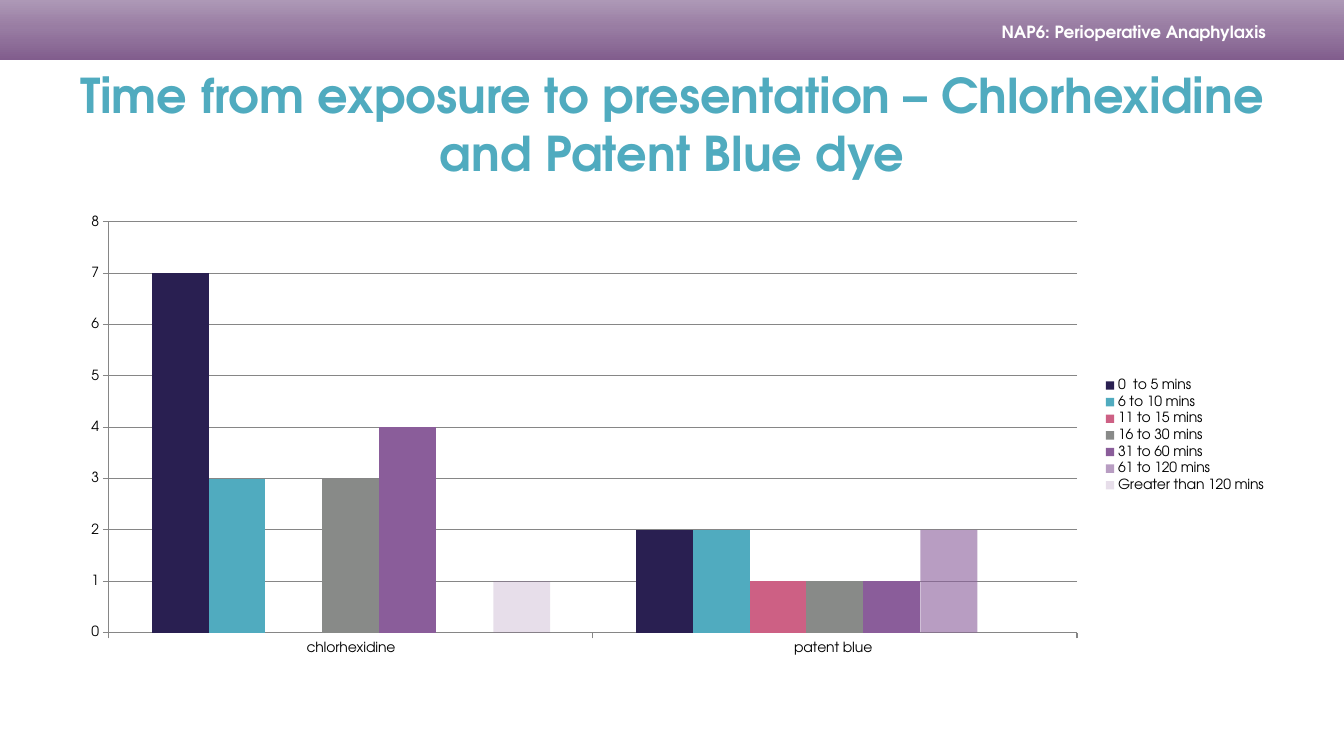
from copy import deepcopy
from lxml import etree
from pptx import Presentation
from pptx import util as u
from pptx.chart import data
from pptx.dml import color
from pptx.enum import chart as ch, shapes, text
from pptx.oxml import ns

Pt = u.Pt
FONT = "TeX Gyre Adventor"
COLORS = {
    "navy": "291F51", "teal": "50ABBF", "pink": "CD6084", "grey": "888A88",
    "purple": "8A5D9A", "line": "868686", "black": "000000", "white": "FFFFFF",
    "band_dark": "815D8D", "band_mid": "997DA3", "band_light": "AD98B6",
}


def rgb(name):
    return color.RGBColor.from_string(COLORS[name])


def add_text(box, words, size, tint, align):
    left, top, width, height = box
    tf = s.shapes.add_textbox(Pt(left), Pt(top), Pt(width), Pt(height)).text_frame
    tf.word_wrap = True
    tf.vertical_anchor = text.MSO_ANCHOR.MIDDLE
    p = tf.paragraphs[0]
    p.alignment = align
    r = p.add_run()
    r.text = words
    r.font.name, r.font.size, r.font.bold = FONT, Pt(size), True
    r.font.color.rgb = rgb(tint)


prs = Presentation()
prs.slide_width, prs.slide_height = Pt(960), Pt(540)
s = prs.slides.add_slide(prs.slide_layouts[6])

# Header band, darkest at the bottom
band = s.shapes.add_shape(shapes.MSO_SHAPE.RECTANGLE, 0, 0, Pt(960), Pt(43))
band.shadow.inherit = False
band.line.fill.background()
band.fill.gradient()
band.fill.gradient_angle = 90
first_stop = band.fill.gradient_stops
gs_list = band.fill._xPr.find(ns.qn("a:gradFill")).find(ns.qn("a:gsLst"))
gs_list.insert(1, deepcopy(gs_list[0]))
band_stops = [("band_dark", 0), ("band_mid", 0.55), ("band_light", 1)]
for stop, (name, position) in zip(band.fill.gradient_stops, band_stops):
    stop.color.rgb = rgb(name)
    stop.position = position

# Header and title
add_text((601, 13, 310.5, 20), "NAP6: Perioperative Anaphylaxis", 12, "white",
         text.PP_ALIGN.RIGHT)
add_text((48, 43, 864, 90), "Time from exposure to presentation – Chlorhexidine and Patent Blue dye",
         34.2, "teal", text.PP_ALIGN.CENTER)

# Chart data: name, values, colour, opacity in percent
times = [
    ("0  to 5 mins", (7, 2), "navy", 100),
    ("6 to 10 mins", (3, 2), "teal", 100),
    ("11 to 15 mins", (None, 1), "pink", 100),
    ("16 to 30 mins", (3, 1), "grey", 100),
    ("31 to 60 mins", (4, 1), "purple", 100),
    ("61 to 120 mins", (None, 2), "purple", 60),
    ("Greater than 120 mins", (1, None), "purple", 20),
]
chart_data = data.CategoryChartData()
chart_data.categories = ["chlorhexidine", "patent blue "]
for name, values, _, _ in times:
    chart_data.add_series(name, values)

chart = s.shapes.add_chart(ch.XL_CHART_TYPE.COLUMN_CLUSTERED, Pt(48), Pt(147.5),
                           Pt(864), Pt(327), chart_data).chart
chart.has_title = False
chart.font.name, chart.font.size = FONT, Pt(10)
chart.font.color.rgb = rgb("black")
chart.has_legend = True
chart.legend.position = ch.XL_LEGEND_POSITION.RIGHT
chart.legend.include_in_layout = False

# Columns
plot = chart.plots[0]
plot.gap_width, plot.overlap, plot.vary_by_categories = 150, 0, False
for series, (_, _, tint, opacity) in zip(plot.series, times):
    series.invert_if_negative = False
    fill = series.format.fill
    fill.solid()
    fill.fore_color.rgb = rgb(tint)
    if opacity < 100:
        srgb = series.format.fill._xPr.find(ns.qn("a:solidFill"))[0]
        etree.SubElement(srgb, ns.qn("a:alpha"), val=str(opacity * 1000))

# Axes
value_axis = chart.value_axis
value_axis.minimum_scale, value_axis.maximum_scale, value_axis.major_unit = 0, 8, 1
value_axis.has_major_gridlines = True
for axis in (chart.category_axis, value_axis):
    axis.major_tick_mark = ch.XL_TICK_MARK.OUTSIDE
    axis.minor_tick_mark = ch.XL_TICK_MARK.NONE
for part in (chart.category_axis, value_axis, value_axis.major_gridlines):
    part.format.line.color.rgb = rgb("line")
    part.format.line.width = Pt(0.75)

prs.save("out.pptx")
